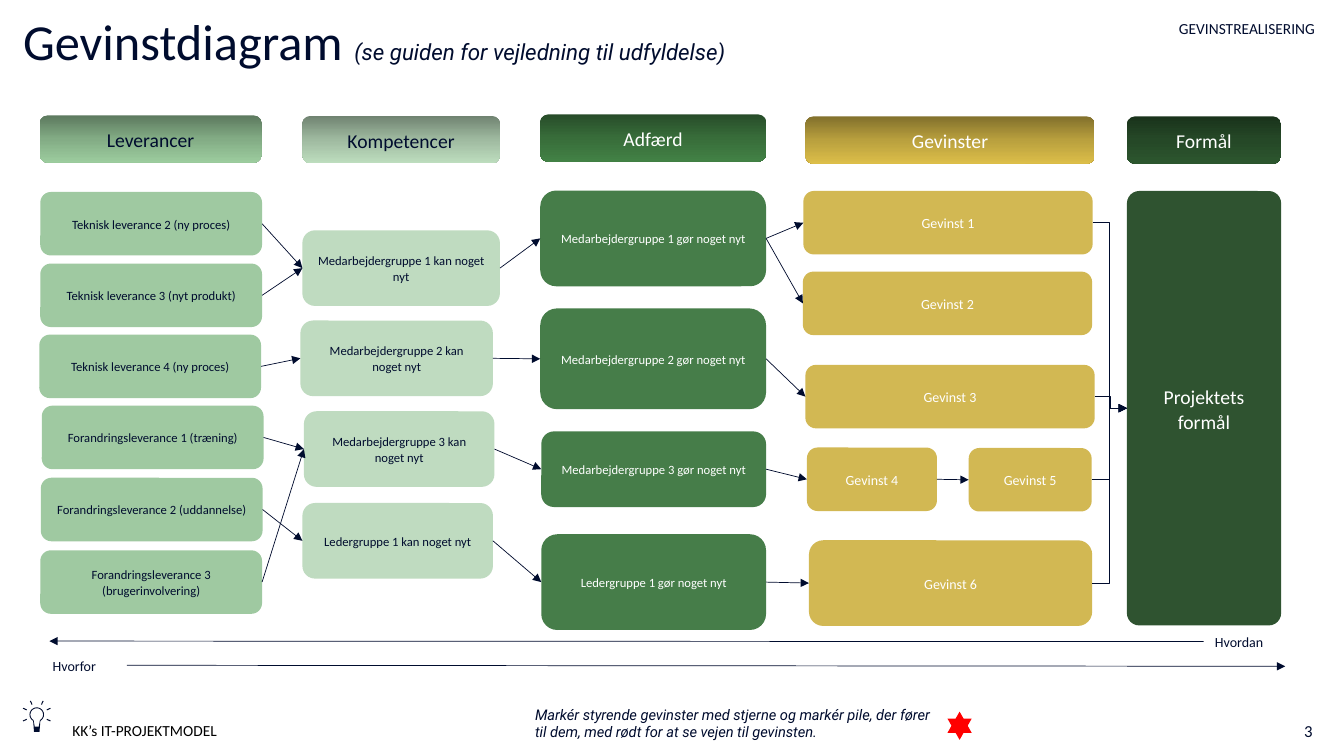
from copy import deepcopy
from math import cos, radians, sin

from lxml.etree import SubElement
from pptx import Presentation
from pptx.dml.color import RGBColor
from pptx.enum.shapes import MSO_CONNECTOR, MSO_SHAPE
from pptx.enum.text import MSO_ANCHOR, PP_ALIGN
from pptx.oxml.ns import qn
from pptx.util import Inches, Pt

CELL = Inches(0.1)
COLS, ROWS = 133.33, 75
LEFT, RIGHT = 1, 3

COLORS = {
    "ink": "000C2E", "white": "FFFFFF", "black": "000000", "star": "FF0000",
    "deliverable": "9FC9A1", "skill": "BFDBC0", "behaviour": "467D49",
    "gain": "D2B853", "purpose": "2F5330",
}
GRADIENTS = {
    "deliverable": ("5C795E", "83AC85", "9CCC9E"),
    "skill": ("708371", "9FBAA0", "BDDDBE"),
    "behaviour": ("274C29", "386D3A", "428145"),
    "gain": ("82702C", "B9A03E", "DCBE49"),
    "purpose": ("1A331B", "254827", "2C562E"),
}
COLUMNS = [
    ("deliverable", "Leverancer", (3.95, 11.45, 22, 4.7), "ink", 9, [
        ("L2", "Teknisk leverance 2 (ny proces)", 0.05, 7.6, 22, 6.3),
        ("L3", "Teknisk leverance 3 (nyt produkt)", 0.05, 14.7, 22, 6.3),
        ("L4", "Teknisk leverance 4 (ny proces)", -0.05, 21.75, 22, 6.3),
        ("F1", "Forandringsleverance 1 (træning)", 0.2, 28.8, 22, 6.3),
        ("F2", "Forandringsleverance 2 (uddannelse)", 0.1, 35.95, 22, 6.3),
        ("F3", "Forandringsleverance 3 (brugerinvolvering)", 0.05, 43.15, 22, 6.3)]),
    ("skill", "Kompetencer", (30, 11.5, 19.6, 4.7), "ink", 9, [
        ("K1", "Medarbejdergruppe 1 kan noget nyt", 0, 11.35, 19.6, 7.5),
        ("K2", "Medarbejdergruppe 2 kan noget nyt", -0.2, 20.3, 19.1, 7.5),
        ("K3", "Medarbejdergruppe 3 kan noget nyt", 0.15, 29.3, 18.9, 7.5),
        ("K4", "Ledergruppe 1 kan noget nyt", 0, 38.4, 18.9, 7.5)]),
    ("behaviour", "Adfærd", (53.6, 11.35, 22.4, 4.7), "white", 9, [
        ("A1", "Medarbejdergruppe 1 gør noget nyt", 0, 7.55, 22.4, 9.5),
        ("A2", "Medarbejdergruppe 2 gør noget nyt", 0, 19.25, 22.4, 10),
        ("A3", "Medarbejdergruppe 3 gør noget nyt", 0.1, 31.45, 22.3, 7.5),
        ("A4", "Ledergruppe 1 gør noget nyt", 0.1, 41.65, 22.3, 9.5)]),
    ("gain", "Gevinster", (79.9, 11.55, 28.7, 4.7), "white", 10, [
        ("G1", "Gevinst 1", -0.2, 7.4, 28.7, 6.3),
        ("G2", "Gevinst 2", -0.25, 15.4, 28.7, 6.3),
        ("G3", "Gevinst 3", 0, 24.65, 28.7, 6.3),
        ("G4", "Gevinst 4", 0.15, 32.85, 12.9, 6.3),
        ("G5", "Gevinst 5", 16.2, 32.9, 12.2, 6.3),
        ("G6", "Gevinst 6", 0.35, 42.05, 28.1, 8.5)]),
    ("purpose", "Formål", (111.8, 11.55, 15.3, 4.7), "white", 14, [
        ("P", "Projektets formål", 0, 7.4, 15.3, 43.1)]),
]
LINKS = [
    ("L2", "K1"), ("L3", "K1"), ("L4", "K2"), ("F1", "K3"), ("F2", "K4"), ("F3", "K3"),
    ("K1", "A1"), ("K2", "A2"), ("K3", "A3"), ("K4", "A4"),
    ("A1", "G1"), ("A1", "G2"), ("A2", "G3"), ("A3", "G4"), ("A4", "G6"), ("G4", "G5"),
    ("G1", "P"), ("G3", "P"), ("G5", "P"), ("G6", "P"),
]


def rgb(name):
    """Return a named or hex colour."""
    return RGBColor.from_string(COLORS.get(name, name))


def place(box):
    """Turn grid cells into lengths."""
    return [round(v * CELL) for v in box]


def write(tf, runs, align=PP_ALIGN.LEFT, anchor=MSO_ANCHOR.TOP, **spacing):
    """Fill a text frame with one paragraph of formatted runs."""
    tf.word_wrap = True
    tf.vertical_anchor = anchor
    p = tf.paragraphs[0]
    p.alignment = align
    for key, value in spacing.items():
        setattr(p, key, value)
    for text, size, color, fmt in runs:
        r = p.add_run()
        r.text = text
        for key, value in {"name": "Calibri", "size": Pt(size), **fmt}.items():
            setattr(r.font, key, value)
        r.font.color.rgb = rgb(color)


def add_label(s, box, text, size, color="ink", **layout):
    """Add a plain text box."""
    fmt = layout.pop("fmt", {})
    write(s.shapes.add_textbox(*place(box)).text_frame, [(text, size, color, fmt)], **layout)


def add_plain(s, kind, box, fill=None):
    """Add a preset shape without line or shadow."""
    sp = s.shapes.add_shape(kind, *place(box))
    sp.shadow.inherit = False
    sp.line.fill.background()
    if fill:
        sp.fill.solid()
        sp.fill.fore_color.rgb = rgb(fill)
    else:
        sp.fill.background()
    return sp


def add_card(s, box, text, size, color, fill=None, align=PP_ALIGN.CENTER, anchor=MSO_ANCHOR.MIDDLE):
    """Add a rounded card with text."""
    sp = add_plain(s, MSO_SHAPE.ROUNDED_RECTANGLE, box, fill)
    write(sp.text_frame, [(text, size, color, {})], align, anchor,
          line_spacing=1.06, space_after=Pt(8))
    return sp


def shade(sp, colors):
    """Give a shape a three-step gradient from top to bottom."""
    sp.fill.gradient()
    sp.fill.gradient_angle = 270
    stops = sp._element.spPr.find(".//" + qn("a:gsLst"))
    stops.append(deepcopy(stops[-1]))
    for i, (stop, color) in enumerate(zip(sp.fill.gradient_stops, colors)):
        stop.position = i / 2
        stop.color.rgb = rgb(color)


def add_arrow(s, start, end=None, side=RIGHT, point=(0, 0), kind=MSO_CONNECTOR.STRAIGHT):
    """Draw an arrow from one card to another card or to a point."""
    x, y = place(point)
    c = s.shapes.add_connector(kind, x, y, x, y)
    c.begin_connect(start, side)
    if end is not None:
        c.end_connect(end, LEFT)
    c.line.width = Pt(0.5)
    c.line.color.rgb = rgb("ink")
    SubElement(c.line._get_or_add_ln(), qn("a:tailEnd"), type="triangle")
    SubElement(c._element.spPr, qn("a:effectLst"))


def add_column(s, theme, heading, box, color, size, cards):
    """Build a heading with its cards and return the cards by key."""
    x, y, w, h = box
    shade(add_card(s, box, heading, 14, color, theme), GRADIENTS[theme])
    return {key: add_card(s, (x + dx, y + dy, cw, ch), text, size, color, theme)
            for key, text, dx, dy, cw, ch in cards}


def add_diagram(s):
    """Build all columns and the links between their cards."""
    cards = {}
    for column in COLUMNS:
        cards.update(add_column(s, *column))
    cards["P"].adjustments[0] = 0.08
    for start, end in LINKS:
        kind = MSO_CONNECTOR.ELBOW if end == "P" else MSO_CONNECTOR.STRAIGHT
        add_arrow(s, cards[start], cards[end], kind=kind)


def add_directions(s):
    """Add the two long arrows with their captions."""
    for text, box, side, point in (
            ("Hvorfor", (4.1, 64.5, 8.5, 3), RIGHT, (127.5, 66.1)),
            ("Hvordan", (119.4, 62.15, 10.5, 3), LEFT, (4.9, 63.6))):
        sp = add_card(s, box, text, 10, "ink", align=PP_ALIGN.LEFT, anchor=MSO_ANCHOR.TOP)
        add_arrow(s, sp, side=side, point=point)


def add_bulb(s, x, y):
    """Draw a light bulb with rays around a centre given in cells."""
    def ring(radius, neck, foot):
        arc = [(radius * cos(radians(a)), radius * sin(radians(a))) for a in range(60, -241, -15)]
        return arc + [(-neck, foot), (neck, foot)]

    def ray(angle):
        ux, uy = cos(radians(angle)), sin(radians(angle))
        return [(d * ux - t * uy, d * uy + t * ux)
                for d, t in ((1.1, -0.05), (1.5, -0.05), (1.5, 0.05), (1.1, 0.05))]

    outlines = [ring(0.72, 0.27, 1.7), ring(0.63, 0.2, 1.2)]
    outlines += [ray(a) for a in (25, -25, -65, -115, -155, 155)]
    fb = s.shapes.build_freeform(*place((x + outlines[0][0][0], y + outlines[0][0][1])))
    for i, outline in enumerate(outlines):
        points = [place((x + px, y + py)) for px, py in outline]
        if i:
            fb.move_to(*points[0])
        fb.add_line_segments(points[1:], close=True)
    sp = fb.convert_to_shape()
    sp.shadow.inherit = False
    sp.fill.solid()
    sp.fill.fore_color.rgb = rgb("ink")
    sp.line.fill.background()


def add_title(s, box):
    """Fill the title placeholder."""
    sp = s.shapes.title
    sp.left, sp.top, sp.width, sp.height = place(box)
    write(sp.text_frame, [
        ("Gevinstdiagram ", 36, "ink", {}),
        ("(se guiden for vejledning til udfyldelse)", 16, "ink", {"name": "Roboto", "italic": True}),
    ], line_spacing=0.9)


def add_footer(s):
    """Add the bulb, model name, note with star and page number."""
    add_bulb(s, 3.65, 70.9)
    add_label(s, (6.2, 71, 24.4, 2.9), "KK’s IT-PROJEKTMODEL", 11, "black")
    add_label(s, (52.1, 69.5, 42.2, 4.7),
              "Markér styrende gevinster med stjerne og markér pile, der fører til dem, "
              "med rødt for at se vejen til gevinsten.", 10.5,
              fmt={"name": "Roboto", "italic": True})
    add_plain(s, MSO_SHAPE.STAR_6_POINT, (94, 70.6, 2.4, 2.8), "star")
    add_label(s, (101.2, 70.5, 30, 4), "3", 12, align=PP_ALIGN.RIGHT, anchor=MSO_ANCHOR.MIDDLE)


def main():
    """Build and save the slide."""
    prs = Presentation()
    prs.slide_width, prs.slide_height = place((COLS, ROWS))
    s = prs.slides.add_slide(prs.slide_layouts[5])
    add_title(s, (1.3, 1.2, 118.1, 11.8))
    add_label(s, (97.65, 1.4, 33.8, 2.9), "GEVINSTREALISERING", 11, align=PP_ALIGN.RIGHT)
    add_diagram(s)
    add_directions(s)
    add_footer(s)
    prs.save("out.pptx")


if __name__ == "__main__":
    main()
